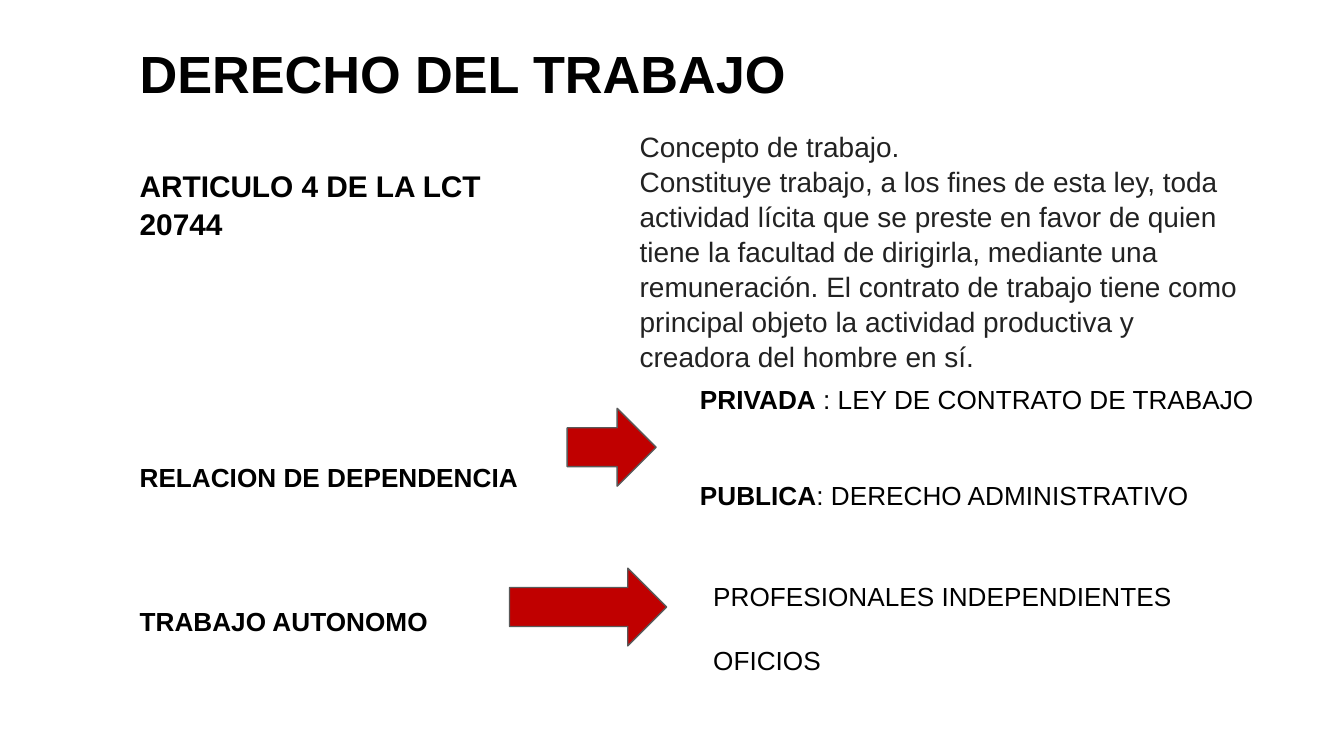
"""Build a slide on the concept of work and its legal regimes."""
from pptx import Presentation
from pptx.dml.color import RGBColor
from pptx.enum import shapes, text
from pptx.util import Cm, Pt

THEME = {
    "font": "Arial", "ink": "000000", "law": "222222",
    "arrow": "C00000", "outline": "595959",
    "title": 28, "article": 16, "quote": 15, "body": 14,
    "spacing": 1.04, "blank": 16.8,
}
SLIDE_SIZE = (25.4, 14.29)
INSET = 0.25

# Each paragraph: (size, blank lines before, [(words, bold), ...])
TEXTS = [
    ((2.39, 0.48, 22.12, 13.36), "ink", [
        ("title", 0, [("DERECHO DEL TRABAJO", True)]),
        ("article", 2, [("ARTICULO 4 DE LA LCT", True)]),
        ("article", 0, [("20744", True)]),
        ("body", 7, [("RELACION DE DEPENDENCIA", True)]),
    ]),
    ((12.98, 6.98, 11.23, 2.8), "ink", [
        ("body", 0, [("PRIVADA", True), (" : LEY DE CONTRATO DE TRABAJO", False)]),
        ("body", 2, [("PUBLICA", True), (": DERECHO ADMINISTRATIVO", False)]),
    ]),
    ((2.39, 11.18, 10.85, 2.8), "ink", [
        ("body", 0, [("TRABAJO AUTONOMO", True)]),
    ]),
    ((13.23, 10.69, 11.25, 2.4), "ink", [
        ("body", 0, [("PROFESIONALES INDEPENDIENTES", False)]),
        ("body", 1, [("OFICIOS", False)]),
    ]),
    ((11.84, 2.18, 12.07, 4.62), "law", [
        ("quote", 0, [("Concepto de trabajo.", False)]),
        ("quote", 0, [(
            "Constituye trabajo, a los fines de esta ley, toda actividad lícita "
            "que se preste en favor de quien tiene la facultad de dirigirla, "
            "mediante una remuneración. El contrato de trabajo tiene como "
            "principal objeto la actividad productiva y creadora del hombre en sí.",
            False)]),
    ]),
]
ARROWS = [(10.72, 7.72, 1.68, 1.47), (9.63, 10.74, 2.97, 1.47)]


def color(name):
    return RGBColor.from_string(THEME[name])


def add_text(slide, place, ink, paragraphs):
    frame = slide.shapes.add_textbox(*map(Cm, place)).text_frame
    frame.word_wrap = True
    frame.vertical_anchor = text.MSO_ANCHOR.TOP
    frame.margin_left = frame.margin_right = Cm(INSET)
    frame.margin_top = frame.margin_bottom = Cm(INSET)
    for index, (size, blanks, runs) in enumerate(paragraphs):
        paragraph = frame.add_paragraph() if index else frame.paragraphs[0]
        paragraph.line_spacing = THEME["spacing"]
        if blanks:
            paragraph.space_before = Pt(blanks * THEME["blank"])
        for words, bold in runs:
            run = paragraph.add_run()
            run.text = words
            run.font.name = THEME["font"]
            run.font.size = Pt(THEME[size])
            run.font.bold = bold
            run.font.color.rgb = color(ink)


def add_arrow(slide, place):
    arrow = slide.shapes.add_shape(shapes.MSO_SHAPE.RIGHT_ARROW, *map(Cm, place))
    arrow.shadow.inherit = False
    arrow.fill.solid()
    arrow.fill.fore_color.rgb = color("arrow")
    arrow.line.color.rgb = color("outline")
    arrow.line.width = Pt(0.75)


def main():
    presentation = Presentation()
    presentation.slide_width, presentation.slide_height = map(Cm, SLIDE_SIZE)
    slide = presentation.slides.add_slide(presentation.slide_layouts[6])
    for place, ink, paragraphs in TEXTS:
        add_text(slide, place, ink, paragraphs)
    for place in ARROWS:
        add_arrow(slide, place)
    presentation.save("out.pptx")


if __name__ == "__main__":
    main()
